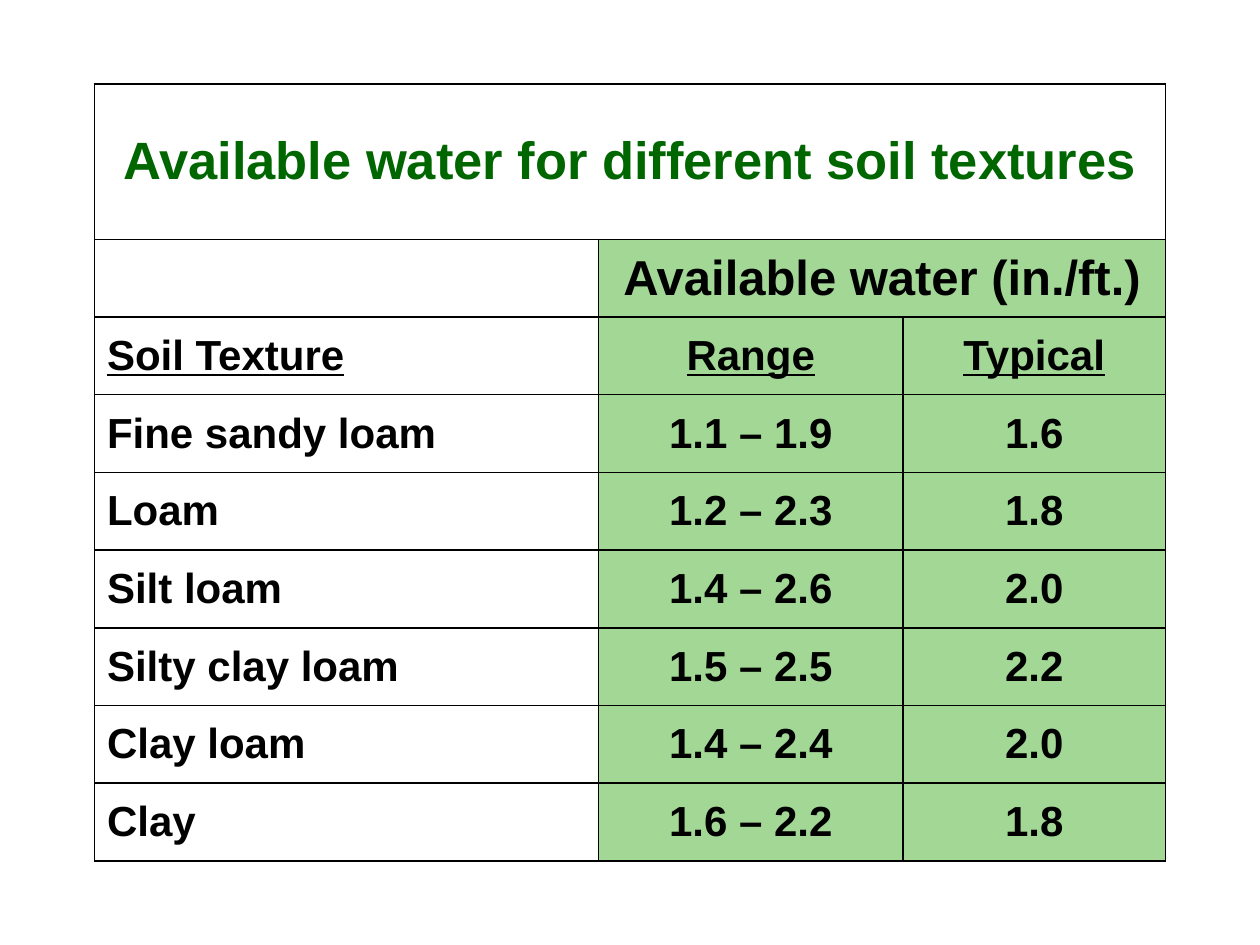
from lxml.etree import SubElement as add_element
from pptx import Presentation
from pptx.dml.color import RGBColor
from pptx.enum.text import MSO_ANCHOR as Anchor, PP_ALIGN as Align
from pptx.oxml.ns import qn
from pptx.util import Pt

BLACK = RGBColor(0x00, 0x00, 0x00)
TITLE_GREEN = RGBColor(0x00, 0x66, 0x00)
CELL_GREEN = RGBColor(0xA2, 0xD7, 0x95)

LEFT, TOP = 54, 48
COLUMN_WIDTHS = [288, 174, 150]
TITLE_HEIGHT, ROW_HEIGHT = 88.8, 44.4
TITLE_ROW, GROUP_ROW, HEADING_ROW = 0, 1, 2

ROWS = [
    ["Available water for different soil textures", "", ""],
    ["", "Available water (in./ft.)", ""],
    ["Soil Texture", "Range", "Typical"],
    ["Fine sandy loam", "1.1 – 1.9", "1.6"],
    ["Loam", "1.2 – 2.3", "1.8"],
    ["Silt loam", "1.4 – 2.6", "2.0"],
    ["Silty clay loam", "1.5 – 2.5", "2.2"],
    ["Clay loam", "1.4 – 2.4", "2.0"],
    ["Clay", "1.6 – 2.2", "1.8"],
]

BODY_FORMAT = {"name": "Arial", "size": Pt(24), "bold": True}
ROW_FORMATS = {
    TITLE_ROW: {"size": Pt(30)},
    GROUP_ROW: {"size": Pt(28)},
    HEADING_ROW: {"underline": True},
}


def add_borders(cell):
    """Draw a thin black line on each side of a cell."""
    properties = cell._tc.get_or_add_tcPr()
    for side in ("lnL", "lnR", "lnT", "lnB"):
        line = add_element(properties, qn(f"a:{side}"), w=str(Pt(1)))
        fill = add_element(line, qn("a:solidFill"))
        add_element(fill, qn("a:srgbClr"), val=str(BLACK))


def fill_cell(cell, shaded):
    """Shade a cell green or leave it clear."""
    if shaded:
        cell.fill.solid()
        cell.fill.fore_color.rgb = CELL_GREEN
    else:
        cell.fill.background()


def write_cell(cell, text, alignment, colour, font_format):
    """Put formatted text in a cell."""
    cell.vertical_anchor = Anchor.MIDDLE
    para = cell.text_frame.paragraphs[0]
    para.alignment = alignment
    span = para.add_run()
    span.text = text
    span.font.color.rgb = colour
    for name, value in font_format.items():
        setattr(span.font, name, value)


def add_water_table(page):
    """Build the table of available water by soil texture."""
    heights = [TITLE_HEIGHT] + [ROW_HEIGHT] * (len(ROWS) - 1)
    table = page.shapes.add_table(
        len(ROWS), len(COLUMN_WIDTHS), Pt(LEFT), Pt(TOP),
        Pt(sum(COLUMN_WIDTHS)), Pt(sum(heights))).table
    table.first_row = table.horz_banding = False
    for column, width in zip(table.columns, COLUMN_WIDTHS):
        column.width = Pt(width)
    for row, height in zip(table.rows, heights):
        row.height = Pt(height)
    table.cell(TITLE_ROW, 0).merge(table.cell(TITLE_ROW, 2))
    table.cell(GROUP_ROW, 1).merge(table.cell(GROUP_ROW, 2))

    for row_index, texts in enumerate(ROWS):
        is_title = row_index == TITLE_ROW
        font_format = BODY_FORMAT | ROW_FORMATS.get(row_index, {})
        colour = TITLE_GREEN if is_title else BLACK
        for column_index, text in enumerate(texts):
            cell = table.cell(row_index, column_index)
            add_borders(cell)
            fill_cell(cell, column_index > 0 and not is_title)
            if text:
                centred = is_title or column_index > 0
                alignment = Align.CENTER if centred else Align.LEFT
                write_cell(cell, text, alignment, colour, font_format)


def main():
    """Create the deck and save it."""
    deck = Presentation()
    deck.slide_width, deck.slide_height = Pt(720), Pt(540)
    page = deck.slides.add_slide(deck.slide_layouts[6])
    add_water_table(page)
    deck.save("out.pptx")


if __name__ == "__main__":
    main()
